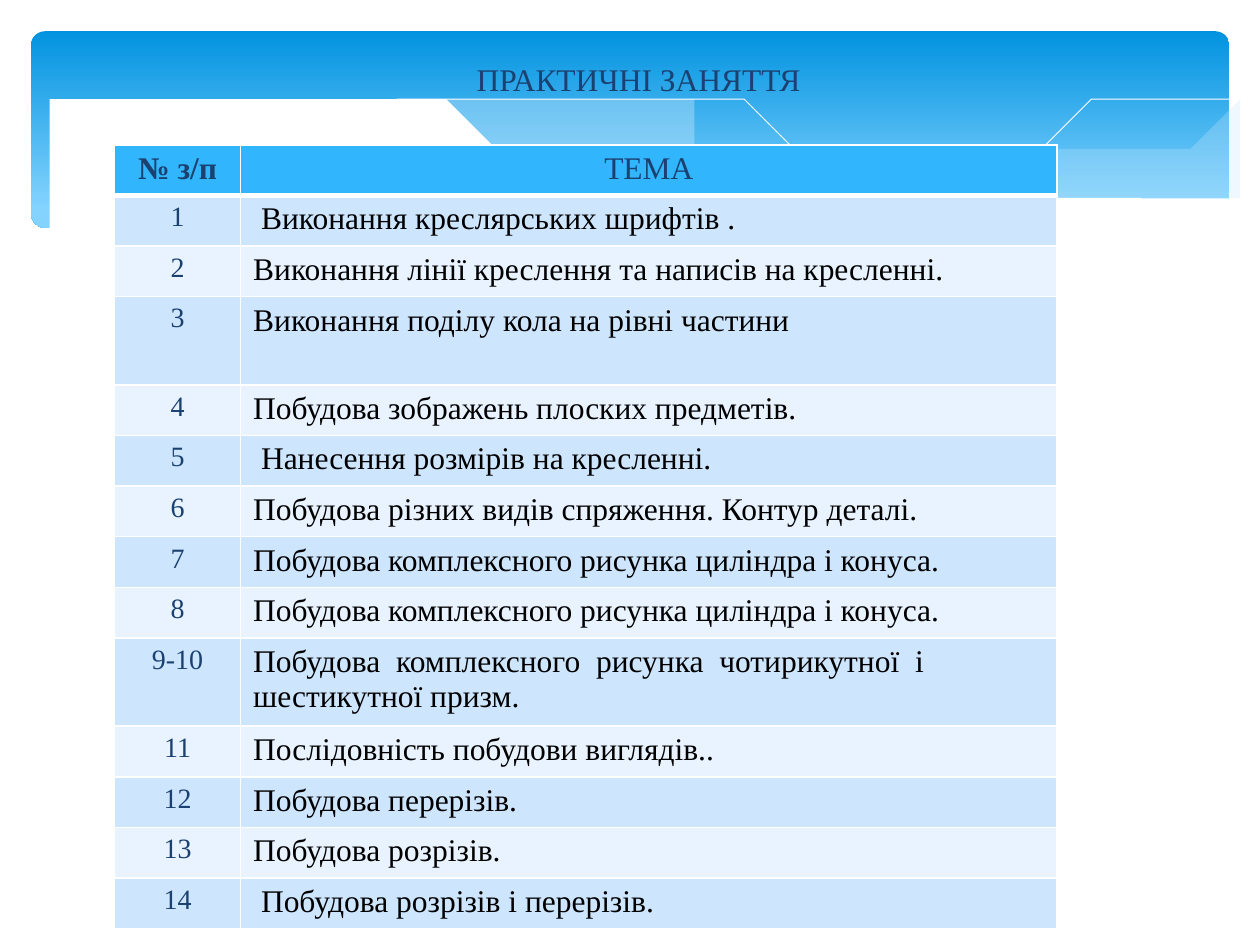
import pptx
import pptx.dml.color
import pptx.enum.shapes
import pptx.enum.text
import pptx.oxml
import pptx.oxml.ns
import pptx.util
from lxml import etree

Cm = pptx.util.Cm
Pt = pptx.util.Pt
RGB = pptx.dml.color.RGBColor
ALIGN = pptx.enum.text.PP_ALIGN
qn = pptx.oxml.ns.qn

WHITE = RGB(0xFF, 0xFF, 0xFF)
BLACK = RGB(0, 0, 0)
NAVY = RGB(0x1B, 0x41, 0x71)
DEEP = RGB(0x02, 0x93, 0xE0)
SKY = RGB(0x83, 0xD3, 0xFE)
MIST = RGB(0xC6, 0xE7, 0xFC)
HEAD = RGB(0x31, 0xB6, 0xFD)
BANDS = (RGB(0xE8, 0xF3, 0xFF), RGB(0xCE, 0xE5, 0xFE))
FONT = "Times New Roman"

ROWS = [
    ("№ з/п", "ТЕМА"),
    ("1", " Виконання креслярських шрифтів ."),
    ("2", "Виконання лінії креслення та написів на кресленні."),
    ("3", "Виконання поділу кола на рівні частини"),
    ("4", "Побудова зображень плоских предметів."),
    ("5", " Нанесення розмірів на кресленні."),
    ("6", "Побудова різних видів спряження. Контур деталі."),
    ("7", "Побудова комплексного рисунка циліндра і конуса."),
    ("8", "Побудова комплексного рисунка циліндра і конуса."),
    ("9-10", "Побудова  комплексного  рисунка  чотирикутної  і шестикутної призм."),
    ("11", "Послідовність побудови виглядів.."),
    ("12", "Побудова перерізів."),
    ("13", "Побудова розрізів."),
    ("14", " Побудова розрізів і перерізів."),
]
TALL = ("3", "9-10")

# Knots of the wave curves, in centimetres
PALE_TOP = [(24.79, 2.39), (23.01, 2.72), (21.87, 3), (19.79, 3.48),
            (18.52, 3.73), (16.79, 4.06)]
PALE_LOW = [(16.79, 4.06), (18.26, 4.24), (19.53, 4.34), (20.93, 4.37),
            (22.15, 4.29), (23.19, 4.11), (24.1, 3.86), (24.79, 3.58)]
MID_TOP = [(22.68, 4.24), (20.5, 3.91), (17.93, 3.41), (15.98, 2.95),
           (14.1, 2.54), (12.42, 2.25), (10.67, 2.08), (9.17, 2.03),
           (7.95, 2.08), (7.26, 2.18)]
MID_LOW = [(7.26, 2.18), (9.19, 2.46), (11.4, 2.95), (14.38, 3.63),
           (16.51, 4.01), (18.34, 4.26), (19.94, 4.37), (21.29, 4.37),
           (22.68, 4.24)]
FALL = [(7.85, 2.29), (8.33, 2.18), (8.97, 2.13), (10.19, 2.08),
        (11.43, 2.08), (12.95, 2.18), (14.78, 2.39), (16.89, 2.74),
        (19.3, 3.25), (21.11, 3.68), (23.04, 4.22)]
RISE = [(15.57, 3.84), (17.07, 3.43), (19, 2.97), (21.23, 2.51),
        (22.73, 2.24), (23.83, 2.11), (24.77, 2.03)]
FRONT = [(24.82, 3.58), (23.88, 3.91), (22.83, 4.17), (21.59, 4.32),
         (20.14, 4.34), (18.44, 4.24), (16.46, 3.96), (14.71, 3.66),
         (12.78, 3.25), (11.35, 2.9), (9.27, 2.44), (7.42, 2.16),
         (5.84, 2.01), (4.5, 1.98), (3.35, 2.05), (2.41, 2.21),
         (1.7, 2.39), (1.17, 2.54), (0.58, 2.72)]
BASE = [(0.58, 5.69), (24.82, 5.69)]


def smooth(knots, steps=5):
    """Points of a Catmull-Rom curve through the knots."""
    ends = [knots[0], *knots, knots[-1]]
    points = [knots[0]]
    for a, b, c, d in zip(ends, ends[1:], ends[2:], ends[3:]):
        for step in range(1, steps + 1):
            t = step / steps
            points.append(tuple(
                b[i] + t / 2 * (c[i] - a[i]
                + t * (2 * a[i] - 5 * b[i] + 4 * c[i] - d[i])
                + t * t * (3 * b[i] - a[i] - 3 * c[i] + d[i]))
                for i in (0, 1)))
    return points


def add_path(slide, points, close):
    path = slide.shapes.build_freeform(*points[0], scale=Cm(1))
    path.add_line_segments(points[1:], close=close)
    shape = path.convert_to_shape()
    shape.shadow.inherit = False
    return shape


def add_wave(slide, points, color, alpha=100):
    shape = add_path(slide, points, True)
    shape.fill.solid()
    shape.fill.fore_color.rgb = color
    shape.line.fill.background()
    if alpha < 100:
        tone = shape.fill._xPr.find(qn("a:solidFill"))[0]
        etree.SubElement(tone, qn("a:alpha"), val=str(alpha * 1000))


def add_curve(slide, knots):
    shape = add_path(slide, smooth(knots), False)
    shape.fill.background()
    shape.line.color.rgb = WHITE
    shape.line.width = Pt(0.5)


def add_banner(slide):
    shape = slide.shapes.add_shape(
        pptx.enum.shapes.MSO_SHAPE.ROUNDED_RECTANGLE,
        Cm(0.63), Cm(0.63), Cm(24.15), Cm(3.96))
    shape.adjustments[0] = 0.07
    shape.shadow.inherit = False
    shape.line.fill.background()
    shape.fill.gradient()
    shape.fill.gradient_angle = 270
    for stop, color, place in zip(shape.fill.gradient_stops, (DEEP, SKY), (0, 0.9)):
        stop.color.rgb = color
        stop.position = place


def write(frame, text, size, color, align, bold=False):
    frame.text = text
    para = frame.paragraphs[0]
    para.alignment = align
    font = para.runs[0].font
    font.name, font.size, font.bold = FONT, Pt(size), bold
    font.color.rgb = color


def add_edge(cell, side, width):
    props = cell._tc.get_or_add_tcPr()
    line = etree.SubElement(props, qn("a:ln" + side), w=str(Pt(width)))
    fill = etree.SubElement(line, qn("a:solidFill"))
    etree.SubElement(fill, qn("a:srgbClr"), val=str(WHITE))


def fill_cell(cell, row, col, text):
    head = row == 0
    for side in "LRTB":
        thick = (row, side) in ((0, "B"), (1, "T"))
        add_edge(cell, side, 3 if thick else 1)
    cell.fill.solid()
    cell.fill.fore_color.rgb = HEAD if head else BANDS[row % 2]
    write(cell.text_frame, text,
          18 if head or col else 16,
          NAVY if head or not col else BLACK,
          ALIGN.CENTER if head or not col else ALIGN.LEFT,
          head and not col)


def add_topics(slide):
    table = slide.shapes.add_table(
        len(ROWS), 2, Cm(2.31), Cm(2.92), Cm(19), Cm(15.75)).table
    for col, width in enumerate((2.54, 16.46)):
        table.columns[col].width = Cm(width)
    for row, texts in enumerate(ROWS):
        table.rows[row].height = Cm(1.78 if texts[0] in TALL else 1.02)
        for col, text in enumerate(texts):
            fill_cell(table.cell(row, col), row, col, text)


def add_title(slide):
    box = slide.shapes.add_textbox(Cm(6.5), Cm(1.09), Cm(12.75), Cm(1.02))
    box.text_frame.word_wrap = True
    write(box.text_frame, "ПРАКТИЧНІ ЗАНЯТТЯ", 18, NAVY, ALIGN.CENTER)


def main():
    deck = pptx.Presentation()
    deck.slide_width, deck.slide_height = Cm(25.4), Cm(19.05)
    slide = deck.slides.add_slide(deck.slide_layouts[6])
    add_banner(slide)
    add_wave(slide, smooth(PALE_TOP) + smooth(PALE_LOW), MIST, 29)
    add_wave(slide, smooth(MID_TOP) + smooth(MID_LOW), MIST, 40)
    add_curve(slide, FALL)
    add_curve(slide, RISE)
    add_wave(slide, smooth(FRONT) + BASE, WHITE)
    add_topics(slide)
    add_title(slide)
    deck.save("out.pptx")


if __name__ == "__main__":
    main()
